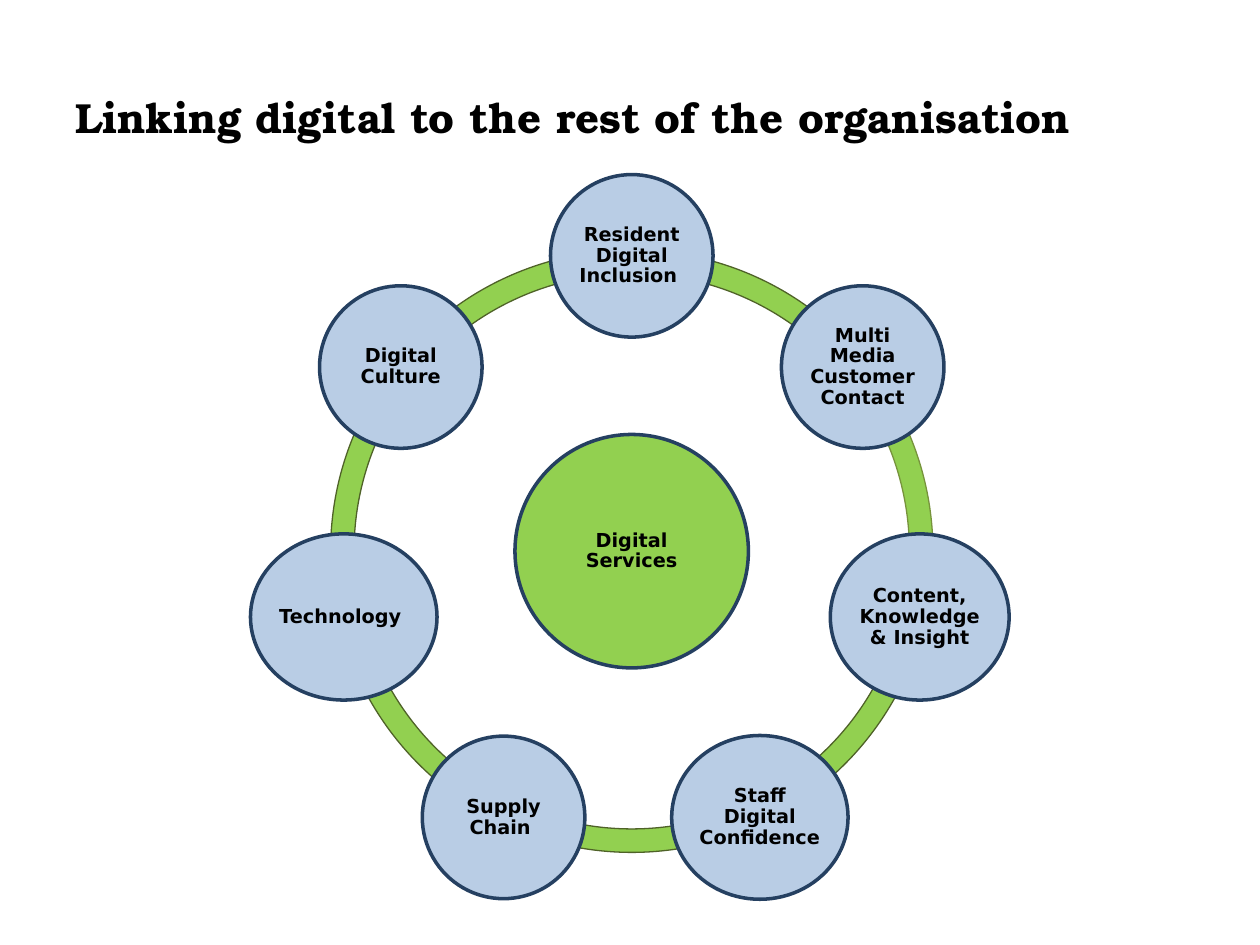
from dataclasses import dataclass
from math import cos, radians, sin

from pptx import Presentation
from pptx.dml.color import RGBColor
from pptx.enum.shapes import MSO_SHAPE
from pptx.enum.text import MSO_ANCHOR, PP_ALIGN
from pptx.util import Pt

ELLIPSE = MSO_SHAPE.OVAL
BLOCK_ARC = MSO_SHAPE.BLOCK_ARC
MIDDLE = MSO_ANCHOR.MIDDLE
LEFT = PP_ALIGN.LEFT
CENTER = PP_ALIGN.CENTER

COLORS = {
    "green": "92D050",
    "ring_line": "4F6228",
    "light_ring_line": "77933C",
    "blue": "B9CDE5",
    "navy": "254061",
    "black": "000000",
}
TITLE_FONT = "TeX Gyre Bonum"
LABEL_FONT = "DejaVu Sans"

# Wheel geometry, in points
CENTER_X, CENTER_Y = 361, 315
RING_SIZE = 344.2
RING_THICKNESS = 0.039  # share of the ring size
ORBIT_RADIUS = 168.8
HUB_SIZE = 133.4
TOP_ANGLE = 270
ANGLE_UNIT = 0.6  # adjustment value of one degree
LABEL_INSET = 0.5  # narrow, so that the longest words stay whole


@dataclass
class Topic:
    label: str
    width: float = 92.9
    height: float = 92.9
    arc_line: str = "ring_line"  # line of the arc leading on from this topic


# Clockwise from the top
TOPICS = [
    Topic("Resident Digital Inclusion "),
    Topic("Multi Media Customer Contact", arc_line="light_ring_line"),
    Topic("Content, Knowledge & Insight", 102.2, 95),
    Topic("Staff Digital Confidence", 100.8, 93.6),
    Topic("Supply Chain "),
    Topic("Technology ", 106.6, 95),
    Topic("Digital Culture"),
]


def write_text(shape, text: str, *, font: str, size: float, align=CENTER,
               inset: float | None = None, line_spacing: float = 1.0) -> None:
    frame = shape.text_frame
    frame.word_wrap = True
    frame.vertical_anchor = MIDDLE
    if inset is not None:
        frame.margin_left = frame.margin_right = Pt(inset)
        frame.margin_top = frame.margin_bottom = Pt(inset)
    paragraph = frame.paragraphs[0]
    paragraph.alignment = align
    paragraph.line_spacing = line_spacing
    run = paragraph.add_run()
    run.text = text
    run.font.name = font
    run.font.size = Pt(size)
    run.font.bold = True
    run.font.color.rgb = RGBColor.from_string(COLORS["black"])


def add_centered(slide, kind, x: float, y: float, width: float, height: float,
                 *, fill: str, line: str, line_width: float):
    shape = slide.shapes.add_shape(kind, Pt(x - width / 2), Pt(y - height / 2),
                                   Pt(width), Pt(height))
    shape.shadow.inherit = False
    shape.fill.solid()
    shape.fill.fore_color.rgb = RGBColor.from_string(COLORS[fill])
    shape.line.color.rgb = RGBColor.from_string(COLORS[line])
    shape.line.width = Pt(line_width)
    return shape


def add_arc(slide, start: float, end: float, line: str) -> None:
    arc = add_centered(slide, BLOCK_ARC, CENTER_X, CENTER_Y, RING_SIZE, RING_SIZE,
                       fill="green", line=line, line_width=0.75)
    arc.adjustments[0] = start % 360 * ANGLE_UNIT
    arc.adjustments[1] = end % 360 * ANGLE_UNIT
    arc.adjustments[2] = RING_THICKNESS


def add_circle(slide, label: str, x: float, y: float, width: float, height: float,
               fill: str) -> None:
    circle = add_centered(slide, ELLIPSE, x, y, width, height,
                          fill=fill, line="navy", line_width=2)
    write_text(circle, label, font=LABEL_FONT, size=11, inset=LABEL_INSET,
               line_spacing=0.9)


def main() -> None:
    prs = Presentation()
    prs.slide_width, prs.slide_height = Pt(720), Pt(540)
    slide = prs.slides.add_slide(prs.slide_layouts[6])

    # Title
    title = slide.shapes.add_textbox(Pt(36), Pt(21.6), Pt(648), Pt(90))
    write_text(title, "Linking digital to the rest of the organisation",
               font=TITLE_FONT, size=24, align=LEFT)

    # Ring segments between neighbouring topics
    step = 360 / len(TOPICS)
    angles = [TOP_ANGLE + i * step for i in range(len(TOPICS))]
    for topic, angle in zip(TOPICS, angles):
        add_arc(slide, angle, angle + step, topic.arc_line)

    # Hub
    add_circle(slide, "Digital Services", CENTER_X, CENTER_Y, HUB_SIZE, HUB_SIZE, "green")

    # Topics around the hub
    for topic, angle in zip(TOPICS, angles):
        x = CENTER_X + ORBIT_RADIUS * cos(radians(angle))
        y = CENTER_Y + ORBIT_RADIUS * sin(radians(angle))
        add_circle(slide, topic.label, x, y, topic.width, topic.height, "blue")

    prs.save("out.pptx")


if __name__ == "__main__":
    main()
